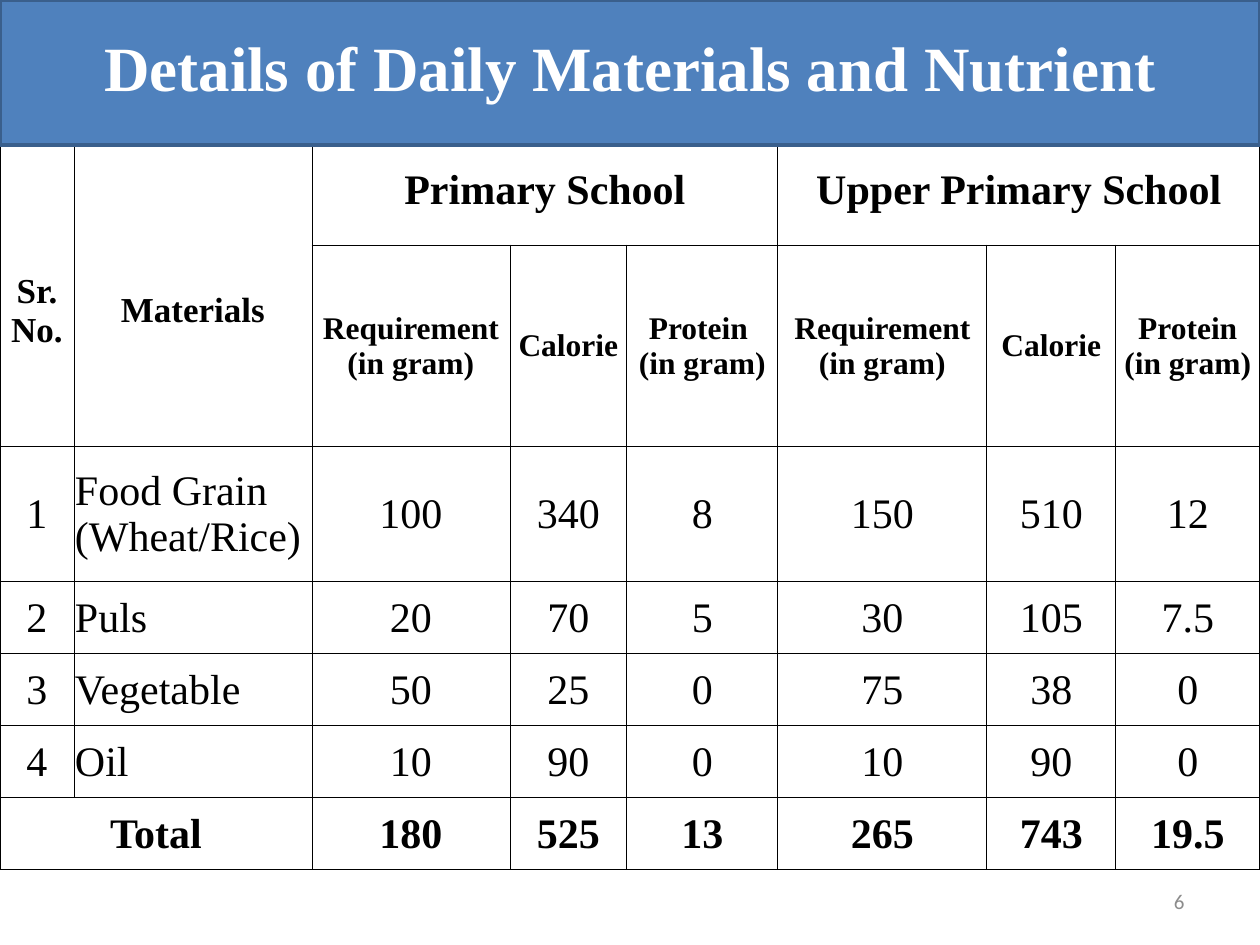
from lxml import etree
from pptx import Presentation
from pptx import util as u
from pptx.dml.color import RGBColor
from pptx.enum import text
from pptx.oxml import ns

SCALE = 914400 / 126
SERIF = "Times New Roman"
CENTER, LEFT, RIGHT = text.PP_ALIGN.CENTER, text.PP_ALIGN.LEFT, text.PP_ALIGN.RIGHT


def px(length):
    return u.Emu(round(length * SCALE))


def color(value):
    return RGBColor.from_string(value)


class NutrientSlide:
    ink = "000000"
    border_points = 0.5
    inset = 1

    def __init__(self, deck):
        self.slide = deck.slides.add_slide(deck.slide_layouts[5])

    def wording(self, frame, lines, size, bold=False, align=CENTER, font=SERIF, ink=ink):
        frame.word_wrap = True
        frame.vertical_anchor = text.MSO_ANCHOR.MIDDLE
        for index, line in enumerate(lines):
            paragraph = frame.add_paragraph() if index else frame.paragraphs[0]
            paragraph.alignment = align
            run = paragraph.add_run()
            run.text = line
            run.font.name = font
            run.font.size = u.Pt(size)
            run.font.bold = bold
            run.font.color.rgb = color(ink)

    def heading(self, title, left, top, width, height):
        banner = self.slide.shapes.title
        banner.left, banner.top, banner.width, banner.height = map(px, (left, top, width, height))
        banner.fill.solid()
        banner.fill.fore_color.rgb = color("4F81BD")
        banner.line.color.rgb = color("3A5F8C")
        banner.line.width = u.Pt(2)
        frame = banner.text_frame
        frame.auto_size = text.MSO_AUTO_SIZE.NONE
        frame.margin_left = frame.margin_right = frame.margin_bottom = px(13)
        frame.margin_top = 0
        self.wording(frame, [title], 36, True, ink="FFFFFF")
        self.slide.shapes.element.append(banner.element)

    def grid(self, left, top, widths, heights):
        table = self.slide.shapes.add_table(
            len(heights), len(widths), px(left), px(top), px(sum(widths)), px(sum(heights))
        ).table
        table.first_row = table.horz_banding = False
        for column, width in zip(table.columns, widths):
            column.width = px(width)
        for row, height in zip(table.rows, heights):
            row.height = px(height)
        for cell in table.iter_cells():
            cell.fill.background()
            cell.margin_left = cell.margin_right = cell.margin_top = px(self.inset)
            cell.margin_bottom = 0
            self.outline(cell)
        return table

    def outline(self, cell):
        properties = cell._tc.get_or_add_tcPr()
        for index, side in enumerate(("lnL", "lnR", "lnT", "lnB")):
            line = etree.Element(ns.qn(f"a:{side}"), w=str(u.Pt(self.border_points)))
            solid = etree.SubElement(line, ns.qn("a:solidFill"))
            etree.SubElement(solid, ns.qn("a:srgbClr"), val=self.ink)
            properties.insert(index, line)

    def cell(self, table, row, column, lines, size, bold=False, align=CENTER, span=(1, 1), drop=0):
        cell = table.cell(row, column)
        if span != (1, 1):
            cell.merge(table.cell(row + span[0] - 1, column + span[1] - 1))
        cell.margin_top = px(self.inset + drop)
        cell.vertical_anchor = text.MSO_ANCHOR.MIDDLE
        self.wording(cell.text_frame, lines, size, bold, align)

    def page_number(self, number, left, top, width, height):
        box = self.slide.shapes.add_textbox(*map(px, (left, top, width, height)))
        self.wording(box.text_frame, [number], 12, align=RIGHT, font="Calibri", ink="8C8C8C")


def main():
    deck = Presentation()
    deck.slide_width, deck.slide_height = px(1260), px(945)
    page = NutrientSlide(deck)

    widths = [74, 238, 198, 117, 151, 209, 129, 144]
    heights = [110, 201, 136] + [72] * 4
    table = page.grid(0, 135, widths, heights)

    for column, label in enumerate(("Sr. No.", "Materials")):
        page.cell(table, 0, column, [label], 20, True, span=(2, 1), drop=40)

    schools = {2: ("Primary School", "Protein "), 5: ("Upper Primary School", "Protein")}
    for start, (school, protein) in schools.items():
        page.cell(table, 0, start, [school], 24, True, span=(1, 3))
        measures = (["Requirement (in gram)"], ["Calorie"], [protein, "(in gram)"])
        for column, measure in enumerate(measures, start):
            page.cell(table, 1, column, measure, 18, True)

    materials = [
        ("Food Grain (Wheat/Rice)", "100", "340", "8", "150", "510", "12"),
        ("Puls", "20", "70", "5", "30", "105", "7.5"),
        ("Vegetable", "50", "25", "0", "75", "38", "0"),
        ("Oil", "10", "90", "0", "10", "90", "0"),
    ]
    for number, (material, *amounts) in enumerate(materials, 1):
        row = number + 1
        page.cell(table, row, 0, [str(number)], 24)
        page.cell(table, row, 1, [material], 24, align=LEFT)
        for column, amount in enumerate(amounts, 2):
            page.cell(table, row, column, [amount], 24)

    total_row = len(heights) - 1
    page.cell(table, total_row, 0, ["Total"], 24, True, span=(1, 2))
    for column, total in enumerate(("180", "525", "13", "265", "743", "19.5"), 2):
        page.cell(table, total_row, column, [total], 24, True)

    page.page_number("6", 903, 876, 294, 50)
    page.heading("Details of Daily Materials and Nutrient", 0, 0, 1260, 145)
    deck.save("out.pptx")


if __name__ == "__main__":
    main()
